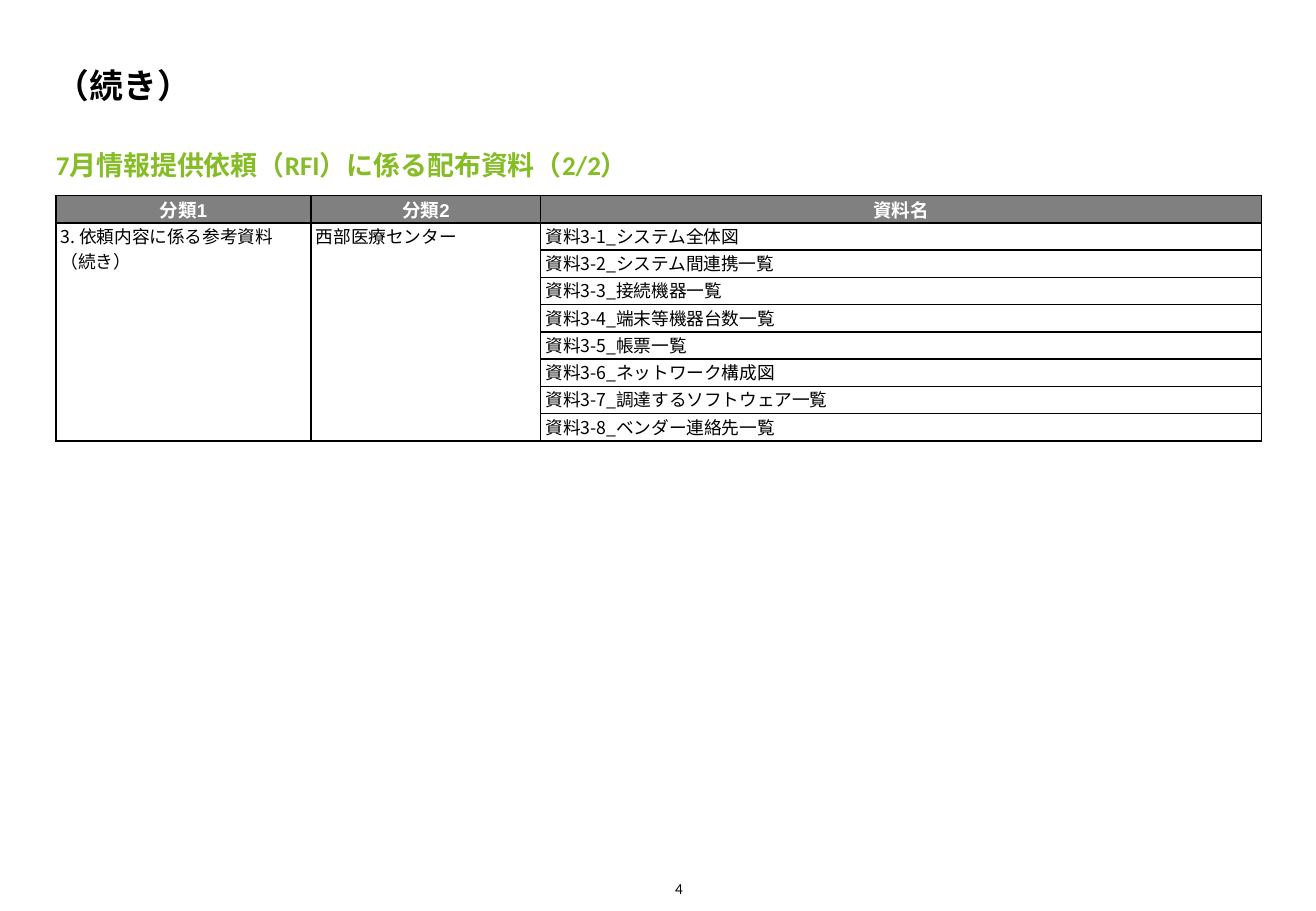
"""Build the RFI handout list slide."""
from dataclasses import dataclass

from pptx import Presentation
from pptx import util as u
from pptx.dml.color import RGBColor
from pptx.enum import text
from pptx.oxml import parse_xml
from pptx.oxml.ns import nsdecls

LEFT, CENTER, RIGHT = text.PP_ALIGN.LEFT, text.PP_ALIGN.CENTER, text.PP_ALIGN.RIGHT
TOP, MIDDLE, BOTTOM = text.MSO_ANCHOR.TOP, text.MSO_ANCHOR.MIDDLE, text.MSO_ANCHOR.BOTTOM


@dataclass(frozen=True)
class TextStyle:
    font: str
    size: float
    color: str
    bold: bool = False
    align: text.PP_ALIGN = LEFT


@dataclass(frozen=True)
class Theme:
    east_asian: str = "Noto Sans CJK JP"
    header_fill: str = "808080"
    border: str = "000000"
    border_width: float = 1
    title: TextStyle = TextStyle("Calibri", 20, "000000", True)
    subtitle: TextStyle = TextStyle("Calibri", 16, "86BC25", True)
    page: TextStyle = TextStyle("Calibri", 9, "000000", align=RIGHT)
    header: TextStyle = TextStyle("Arial", 11, "FFFFFF", True, CENTER)
    body: TextStyle = TextStyle("Noto Sans CJK JP", 10.5, "000000")


@dataclass(frozen=True)
class Label:
    words: str
    left: float
    top: float
    width: float
    height: float
    style: TextStyle
    anchor: text.MSO_ANCHOR
    wrap: bool = True


THEME = Theme()
MARGIN, CONTENT_WIDTH = 0.46, 9.92
TABLE_TOP, TABLE_HEIGHT = 1.61, 2.02
COLUMN_WIDTHS = (2.1, 1.89, 5.93)
HEADINGS = ("分類1", "分類2", "資料名")
CATEGORIES = ("3. 依頼内容に係る参考資料\n（続き）", "西部医療センター")
DOCUMENTS = (
    "システム全体図",
    "システム間連携一覧",
    "接続機器一覧",
    "端末等機器台数一覧",
    "帳票一覧",
    "ネットワーク構成図",
    "調達するソフトウェア一覧",
    "ベンダー連絡先一覧",
)
LABELS = (
    Label("（続き）", MARGIN, 0.2, CONTENT_WIDTH, 0.67, THEME.title, BOTTOM),
    Label("7月情報提供依頼（RFI）に係る配布資料（2/2）", MARGIN, 1.1, 4.76, 0.51,
          THEME.subtitle, MIDDLE),
    Label("4", 5.42, 7.2, 0.2, 0.19, THEME.page, BOTTOM, wrap=False),
)


def write(frame, words: str, style: TextStyle) -> None:
    """Fill a text frame and style each of its paragraphs."""
    frame.text = words
    for paragraph in frame.paragraphs:
        paragraph.alignment = style.align
        font = paragraph.font
        font.name, font.size, font.bold = style.font, u.Pt(style.size), style.bold
        font.color.rgb = RGBColor.from_string(style.color)
        paragraph._p.pPr.defRPr.append(
            parse_xml(f'<a:ea {nsdecls("a")} typeface="{THEME.east_asian}"/>'))


def add_label(slide, label: Label) -> None:
    """Place a text box without insets."""
    frame = slide.shapes.add_textbox(
        *map(u.Inches, (label.left, label.top, label.width, label.height))).text_frame
    frame.margin_left = frame.margin_right = frame.margin_top = frame.margin_bottom = 0
    frame.word_wrap = label.wrap
    frame.vertical_anchor = label.anchor
    write(frame, label.words, label.style)


def format_cell(cell, is_header: bool) -> None:
    """Set the insets, borders, anchor and fill of a cell."""
    cell.margin_left = cell.margin_right = u.Inches(0.04)
    cell.margin_top = cell.margin_bottom = 0
    cell.vertical_anchor = MIDDLE if is_header else TOP
    for side in "LRTB":
        cell._tc.get_or_add_tcPr().append(parse_xml(
            f'<a:ln{side} {nsdecls("a")} w="{u.Pt(THEME.border_width)}"><a:solidFill>'
            f'<a:srgbClr val="{THEME.border}"/></a:solidFill></a:ln{side}>'))
    if is_header:
        cell.fill.solid()
        cell.fill.fore_color.rgb = RGBColor.from_string(THEME.header_fill)
    else:
        cell.fill.background()


def add_document_table(slide) -> None:
    """Draw the table of documents with merged category cells."""
    row_count = len(DOCUMENTS) + 1
    table = slide.shapes.add_table(
        row_count, len(HEADINGS),
        *map(u.Inches, (MARGIN, TABLE_TOP, CONTENT_WIDTH, TABLE_HEIGHT))).table
    for column, width in zip(table.columns, COLUMN_WIDTHS):
        column.width = u.Inches(width)
    for row_index, row in enumerate(table.rows):
        row.height = u.Inches(TABLE_HEIGHT / row_count)
        for cell in row.cells:
            format_cell(cell, row_index == 0)
            write(cell.text_frame, "", THEME.body)
    for index, heading in enumerate(HEADINGS):
        write(table.cell(0, index).text_frame, heading, THEME.header)
    for index, category in enumerate(CATEGORIES):
        table.cell(1, index).merge(table.cell(row_count - 1, index))
        write(table.cell(1, index).text_frame, category, THEME.body)
    for number, document in enumerate(DOCUMENTS, 1):
        write(table.cell(number, 2).text_frame, f"資料3-{number}_{document}", THEME.body)


def main() -> None:
    """Create the slide and save it."""
    deck = Presentation()
    deck.slide_width, deck.slide_height = u.Inches(10.83), u.Inches(7.5)
    slide = deck.slides.add_slide(deck.slide_layouts[6])
    for label in LABELS:
        add_label(slide, label)
    add_document_table(slide)
    deck.save("out.pptx")


if __name__ == "__main__":
    main()
